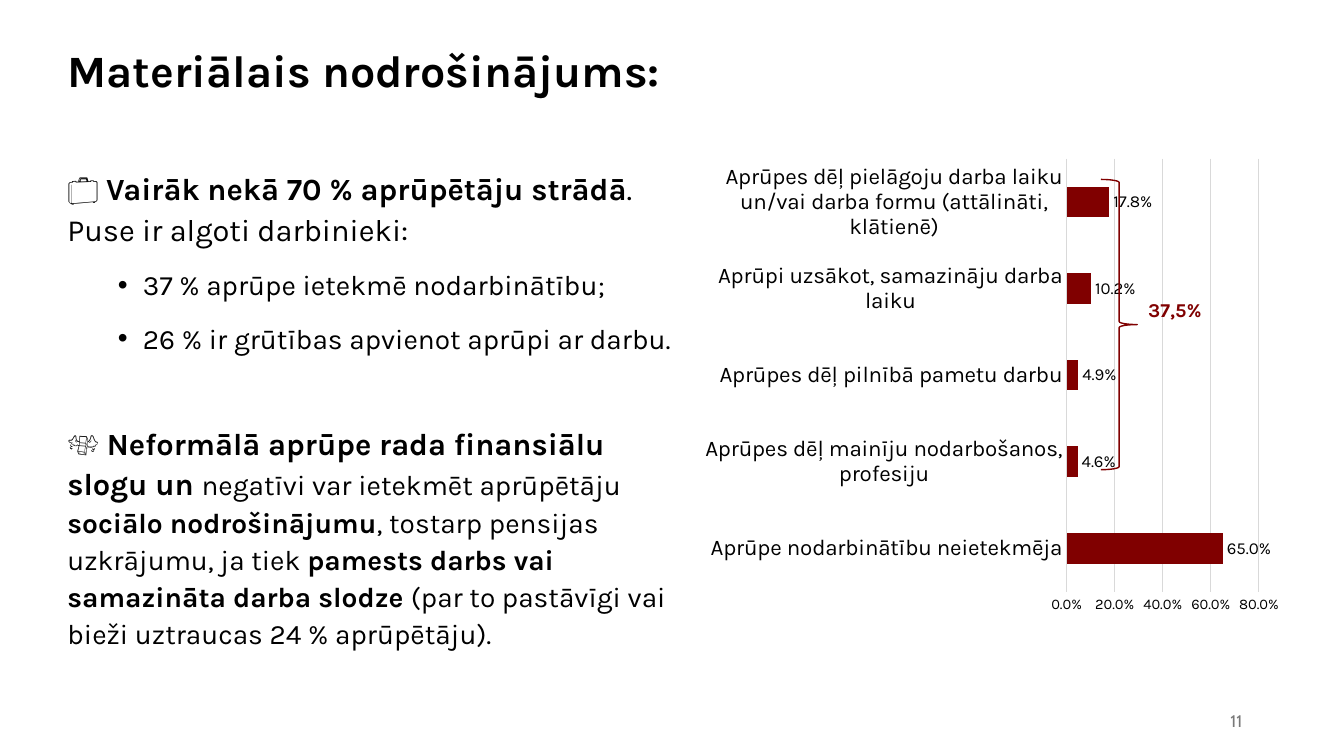
from dataclasses import dataclass

from lxml import etree
from pptx import Presentation
from pptx.chart.data import CategoryChartData
from pptx.dml.color import RGBColor
from pptx.enum.chart import XL_CHART_TYPE, XL_LABEL_POSITION, XL_TICK_MARK
from pptx.enum.shapes import MSO_SHAPE
from pptx.enum.text import MSO_ANCHOR, PP_ALIGN
from pptx.oxml.ns import qn
from pptx.util import Emu, Pt

EMU_PER_PX = 9144  # 100 px to the inch
BLANK_LAYOUT = 6
BAR_CLUSTERED = XL_CHART_TYPE.BAR_CLUSTERED
OUTSIDE_END = XL_LABEL_POSITION.OUTSIDE_END
NO_TICK = XL_TICK_MARK.NONE
RIGHT_BRACE = MSO_SHAPE.RIGHT_BRACE
TOP, MIDDLE = MSO_ANCHOR.TOP, MSO_ANCHOR.MIDDLE
LEFT, RIGHT = PP_ALIGN.LEFT, PP_ALIGN.RIGHT

BLACK, MAROON, GRID_GREY, NUMBER_GREY = "000000", "800000", "D9D9D9", "797979"
PERCENT = "0.0%"
PLOT_AREA = {"x": 0.62, "y": 0.02, "w": 0.325, "h": 0.91}


@dataclass(frozen=True)
class Box:
    left: int
    top: int
    width: int
    height: int

    def emu(self) -> tuple[Emu, ...]:
        return tuple(px(n) for n in (self.left, self.top, self.width, self.height))


@dataclass(frozen=True)
class Run:
    text: str
    size: int
    bold: bool = False
    color: str = BLACK
    font: str = "Karla"


@dataclass(frozen=True)
class Line:
    runs: tuple[Run, ...]
    spacing: float = 1.1
    before: int = 6
    after: int = 6
    bullet: bool = False
    align: PP_ALIGN = LEFT


@dataclass(frozen=True)
class TextBlock:
    box: Box
    lines: tuple[Line, ...]
    anchor: MSO_ANCHOR = TOP


TEXT_BLOCKS = (
    TextBlock(
        Box(57, 29, 1177, 86),
        (Line((Run("Materiālais nodrošinājums:", 32, True),), 0.9, 0, 0),),
        MIDDLE,
    ),
    TextBlock(
        Box(57, 160, 620, 548),
        (
            Line((
                Run("💼 ", 22),
                Run("Vairāk nekā 70 % aprūpētāju strādā", 22, True),
                Run(". Puse ir algoti darbinieki:", 22),
            )),
            Line((Run("37 % aprūpe ietekmē nodarbinātību;", 20),), bullet=True),
            Line((Run("26 % ir grūtības apvienot aprūpi ar darbu.", 20),), bullet=True),
            Line((
                Run("💸 ", 22),
                Run("Neformālā aprūpe rada finansiālu slogu un ", 22, True),
                Run("negatīvi var ietekmēt aprūpētāju ", 20),
                Run("sociālo nodrošinājumu", 20, True),
                Run(", tostarp pensijas uzkrājumu, ja tiek ", 20),
                Run("pamests darbs vai samazināta darba slodze ", 20, True),
                Run("(par to pastāvīgi vai bieži uztraucas 24 % aprūpētāju).", 20),
            ), before=41),
        ),
    ),
    TextBlock(Box(1129, 288, 97, 71), (Line((Run("37,5%", 14, True, MAROON),)),)),
    TextBlock(
        Box(942, 695, 300, 40),
        (Line((Run("11", 12, False, NUMBER_GREY, "Cabin"),), 1.0, 0, 0, align=RIGHT),),
        MIDDLE,
    ),
)

EMPLOYMENT_EFFECTS = {
    "Aprūpe nodarbinātību neietekmēja": 0.65,
    "Aprūpes dēļ mainīju nodarbošanos, profesiju": 0.046,
    "Aprūpes dēļ pilnībā pametu darbu": 0.049,
    "Aprūpi uzsākot, samazināju darba laiku": 0.102,
    "Aprūpes dēļ pielāgoju darba laiku un/vai darba formu (attālināti, klātienē)": 0.178,
}


def px(count: int) -> Emu:
    return Emu(count * EMU_PER_PX)


def rgb(color: str) -> RGBColor:
    return RGBColor.from_string(color)


def style_font(font, size: float, color: str = BLACK, name: str = "Karla") -> None:
    font.name = name
    font.size = Pt(size)
    font.color.rgb = rgb(color)


def style_line(line, color: str, width: float) -> None:
    line.color.rgb = rgb(color)
    line.width = Pt(width)


def add_bullet(paragraph) -> None:
    properties = paragraph._p.get_or_add_pPr()
    properties.set("marL", str(px(75)))
    properties.set("indent", str(-px(25)))
    etree.SubElement(properties, qn("a:buFont")).set("typeface", "Arial")
    etree.SubElement(properties, qn("a:buChar")).set("char", "•")


def add_text(slide, block: TextBlock) -> None:
    frame = slide.shapes.add_textbox(*block.box.emu()).text_frame
    frame.word_wrap = True
    frame.vertical_anchor = block.anchor
    for index, line in enumerate(block.lines):
        paragraph = frame.add_paragraph() if index else frame.paragraphs[0]
        paragraph.alignment = line.align
        paragraph.line_spacing = line.spacing
        paragraph.space_before = Pt(line.before)
        paragraph.space_after = Pt(line.after)
        if line.bullet:
            add_bullet(paragraph)
        for item in line.runs:
            run = paragraph.add_run()
            run.text = item.text
            run.font.bold = item.bold
            style_font(run.font, item.size, item.color, item.font)


def fix_plot_area(chart) -> None:
    """Pin the inner plot area, as fractions of the chart."""
    plot_area = chart._chartSpace.chart.plotArea
    for old_layout in plot_area.findall(qn("c:layout")):
        plot_area.remove(old_layout)
    layout = etree.Element(qn("c:layout"))
    plot_area.insert(0, layout)
    manual = etree.SubElement(layout, qn("c:manualLayout"))
    settings = {"layoutTarget": "inner", "xMode": "edge", "yMode": "edge", **PLOT_AREA}
    for tag, value in settings.items():
        etree.SubElement(manual, qn(f"c:{tag}")).set("val", str(value))


def add_effects_chart(slide, box: Box) -> None:
    data = CategoryChartData(number_format=PERCENT)
    data.categories = list(EMPLOYMENT_EFFECTS)
    data.add_series("Series 1", list(EMPLOYMENT_EFFECTS.values()))
    chart = slide.shapes.add_chart(BAR_CLUSTERED, *box.emu(), data).chart
    chart.has_legend = False
    chart.has_title = False
    style_font(chart.font, 10.5)
    fix_plot_area(chart)

    plot = chart.plots[0]
    plot.gap_width = 182
    plot.vary_by_categories = False
    fill = plot.series[0].format.fill
    fill.solid()
    fill.fore_color.rgb = rgb(MAROON)
    plot.has_data_labels = True
    labels = plot.data_labels
    labels.show_value = True
    labels.position = OUTSIDE_END
    labels.number_format = PERCENT
    labels.number_format_is_linked = False
    style_font(labels.font, 12)

    categories, values = chart.category_axis, chart.value_axis
    for axis, size in ((categories, 16), (values, 10.5)):
        axis.major_tick_mark = axis.minor_tick_mark = NO_TICK
        style_font(axis.tick_labels.font, size)
    style_line(categories.format.line, GRID_GREY, 0.75)
    values.format.line.fill.background()
    values.minimum_scale, values.maximum_scale, values.major_unit = 0, 0.8, 0.2
    values.tick_labels.number_format = PERCENT
    values.tick_labels.number_format_is_linked = False
    style_line(values.major_gridlines.format.line, GRID_GREY, 0.75)


def add_brace(slide, box: Box) -> None:
    brace = slide.shapes.add_shape(RIGHT_BRACE, *box.emu())
    brace.shadow.inherit = False
    brace.fill.background()
    style_line(brace.line, MAROON, 1)


def main() -> None:
    presentation = Presentation()
    presentation.slide_width, presentation.slide_height = px(1333), px(750)
    slide = presentation.slides.add_slide(presentation.slide_layouts[BLANK_LAYOUT])
    add_effects_chart(slide, Box(694, 148, 587, 472))
    add_brace(slide, Box(1092, 178, 36, 288))
    for block in TEXT_BLOCKS:
        add_text(slide, block)
    presentation.save("out.pptx")


if __name__ == "__main__":
    main()
